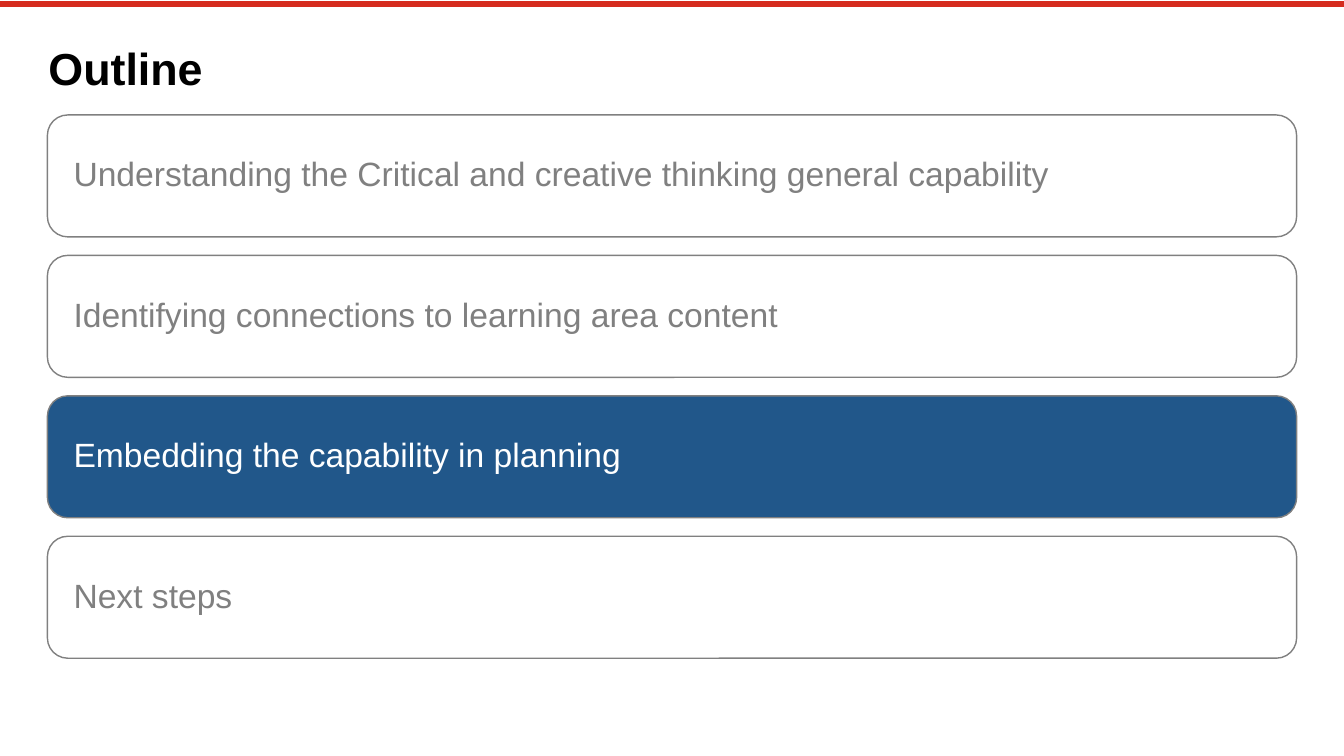
from pptx import Presentation
from pptx.dml.color import RGBColor
from pptx.enum.shapes import MSO_CONNECTOR, MSO_SHAPE
from pptx.enum.text import MSO_ANCHOR, PP_ALIGN
from pptx.util import Inches, Pt
from lxml.etree import SubElement
from pptx.oxml.ns import qn

THEME = {
    "font": "Arial",
    "title_size": Pt(32),
    "item_size": Pt(24),
    "black": RGBColor.from_string("000000"),
    "white": RGBColor.from_string("FFFFFF"),
    "grey": RGBColor.from_string("808080"),
    "blue": RGBColor.from_string("21578A"),
    "red": RGBColor.from_string("D52B1E"),
}
ITEMS = [
    "Understanding the Critical and creative thinking general capability",
    "Identifying connections to learning area content",
    "Embedding the capability in planning",
    "Next steps",
]
CURRENT = 2
FIRST_TOP, LAST_TOP = 1.14, 5.32
PITCH = (LAST_TOP - FIRST_TOP) / (len(ITEMS) - 1)


def set_text(sp, text, size, color, bold, frame):
    tf = sp.text_frame
    for name, value in frame.items():
        setattr(tf, name, value)
    p = tf.paragraphs[0]
    p.alignment = PP_ALIGN.LEFT
    r = p.add_run()
    r.text = text
    r.font.color.rgb = color
    for name, value in {"name": THEME["font"], "size": size, "bold": bold}.items():
        setattr(r.font, name, value)
    return p


prs = Presentation()
prs.slide_width, prs.slide_height = Inches(13.33), Inches(7.5)
s = prs.slides.add_slide(prs.slide_layouts[6])

rule = s.shapes.add_connector(
    MSO_CONNECTOR.STRAIGHT, Inches(0), Inches(0.04), Inches(13.33), Inches(0.04)
)
rule.line.color.rgb = THEME["red"]
rule.line.width = Pt(4.2)
SubElement(rule._element.spPr, qn("a:effectLst"))

item_frame = {
    "word_wrap": True,
    "vertical_anchor": MSO_ANCHOR.MIDDLE,
    "margin_left": Inches(0.2),
    "margin_right": Inches(0.08),
    "margin_top": Inches(0.08),
    "margin_bottom": Inches(0.08),
}
for i, text in enumerate(ITEMS):
    fill, color = ("blue", "white") if i == CURRENT else ("white", "grey")
    sp = s.shapes.add_shape(
        MSO_SHAPE.ROUNDED_RECTANGLE,
        Inches(0.47), Inches(FIRST_TOP + i * PITCH), Inches(12.39), Inches(1.21),
    )
    sp.shadow.inherit = False
    sp.fill.solid()
    sp.fill.fore_color.rgb = THEME[fill]
    sp.line.color.rgb = THEME["grey"]
    sp.line.width = Pt(1)
    p = set_text(sp, text, THEME["item_size"], THEME[color], False, item_frame)
    p.line_spacing = 0.9

title = s.shapes.add_textbox(Inches(0.48), Inches(0.4), Inches(12.39), Inches(0.52))
title_frame = {
    "word_wrap": True,
    "vertical_anchor": MSO_ANCHOR.TOP,
    "margin_left": 0,
    "margin_right": 0,
    "margin_top": 0,
    "margin_bottom": 0,
}
set_text(title, "Outline", THEME["title_size"], THEME["black"], True, title_frame)

prs.save("out.pptx")
